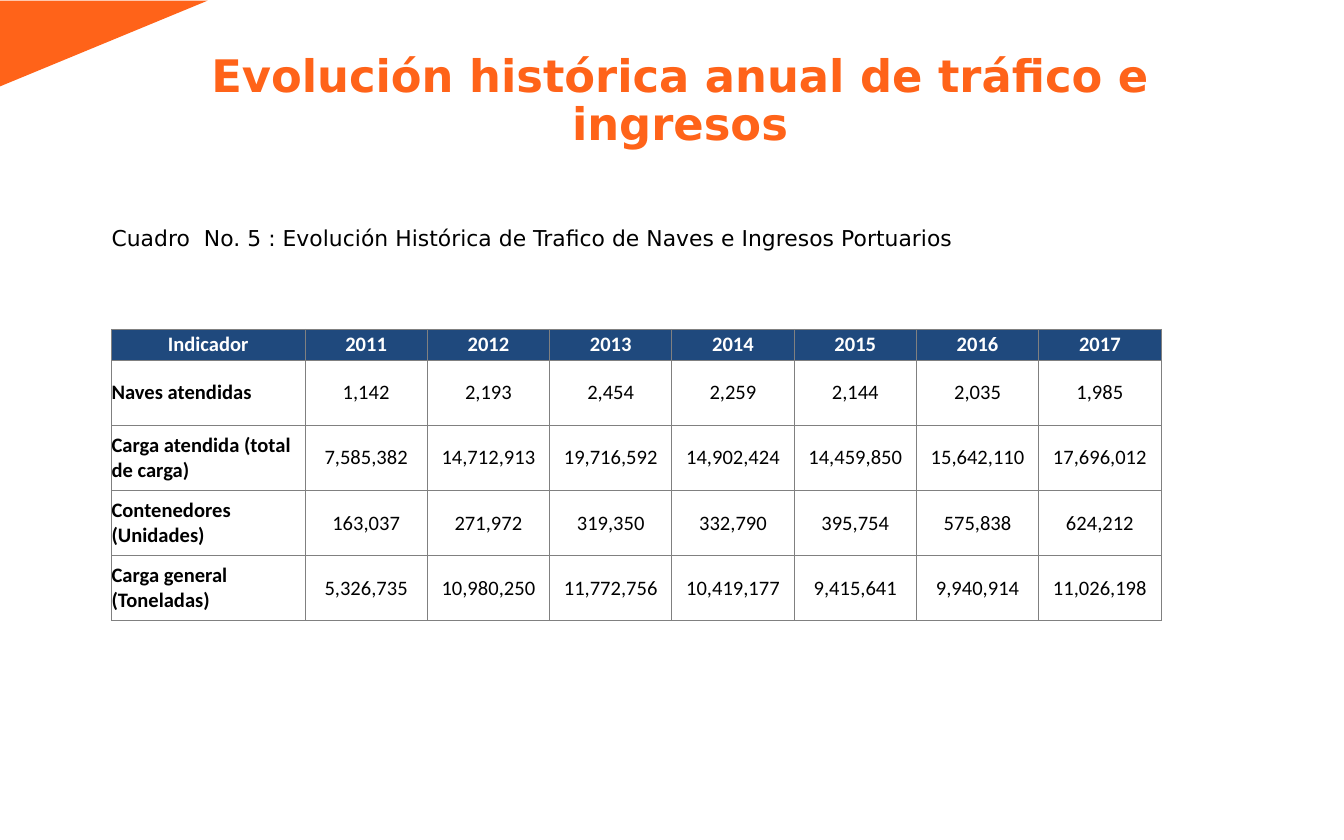
from lxml.etree import SubElement as Sub
from pptx import Presentation
from pptx.dml.color import RGBColor as Rgb
from pptx.enum.shapes import MSO_SHAPE as Shape
from pptx.enum.text import MSO_ANCHOR as Anchor, PP_ALIGN as Align
from pptx.oxml.ns import qn
from pptx.util import Inches, Pt

COLORS = {
    "orange": "FF6319",
    "navy": "1F497D",
    "gray": "808080",
    "black": "000000",
    "white": "FFFFFF",
}

HEAD = ["Indicador"] + [str(year) for year in range(2011, 2018)]
ROWS = [
    ["Naves atendidas", "1,142", "2,193", "2,454", "2,259",
     "2,144", "2,035", "1,985"],
    ["Carga atendida (total de carga)", "7,585,382", "14,712,913",
     "19,716,592", "14,902,424", "14,459,850", "15,642,110", "17,696,012"],
    ["Contenedores (Unidades)", "163,037", "271,972", "319,350", "332,790",
     "395,754", "575,838", "624,212"],
    ["Carga general (Toneladas)", "5,326,735", "10,980,250", "11,772,756",
     "10,419,177", "9,415,641", "9,940,914", "11,026,198"],
]


def color(name):
    return Rgb.from_string(COLORS[name])


def write(frame, text, size=11, font="Calibri", ink="black", bold=False,
          align=Align.LEFT, space=1.0):
    frame.word_wrap = True
    para = frame.paragraphs[0]
    para.alignment = align
    para.line_spacing = space
    run = para.add_run()
    run.text = text
    run.font.size = Pt(size)
    run.font.name = font
    run.font.bold = bold
    run.font.color.rgb = color(ink)


def clear_insets(item):
    item.margin_left = item.margin_right = 0
    item.margin_top = item.margin_bottom = 0


def add_text(slide, box, text, anchor, **style):
    frame = slide.shapes.add_textbox(*map(Inches, box)).text_frame
    clear_insets(frame)
    frame.vertical_anchor = anchor
    write(frame, text, font="DejaVu Sans", space=0.9, **style)


def add_corner(slide):
    box = map(Inches, (0.45, -0.45, 0.64, 1.55))
    corner = slide.shapes.add_shape(Shape.RIGHT_TRIANGLE, *box)
    corner.rotation = 90
    corner.shadow.inherit = False
    corner.fill.solid()
    corner.fill.fore_color.rgb = color("orange")
    corner.line.fill.background()


def set_borders(cell):
    props = cell._tc.get_or_add_tcPr()
    for i, side in enumerate(("lnL", "lnR", "lnT", "lnB")):
        line = props.makeelement(qn(f"a:{side}"), {"w": str(Pt(0.5))})
        fill = Sub(line, qn("a:solidFill"))
        Sub(fill, qn("a:srgbClr"), val=COLORS["gray"])
        props.insert(i, line)  # borders come before the fill


def fill_cell(cell, text, head, label):
    clear_insets(cell)
    cell.vertical_anchor = Anchor.MIDDLE
    if head:
        cell.fill.solid()
        cell.fill.fore_color.rgb = color("navy")
    else:
        cell.fill.background()
    set_borders(cell)
    write(cell.text_frame, text, bold=head or label,
          ink="white" if head else "black",
          align=Align.LEFT if label and not head else Align.CENTER)


def add_grid(slide):
    data = [HEAD] + ROWS
    box = map(Inches, (0.83, 2.45, 7.8, 2.17))
    table = slide.shapes.add_table(len(data), len(HEAD), *box).table
    table.first_row = table.horz_banding = False
    for c, col in enumerate(table.columns):
        col.width = Inches(0.91 if c else 1.44)
    for r, row in enumerate(table.rows):
        row.height = Inches(0.485 if r else 0.23)
        for c, text in enumerate(data[r]):
            fill_cell(table.cell(r, c), text, head=r == 0, label=c == 0)


def main():
    deck = Presentation()
    deck.slide_width, deck.slide_height = Inches(10), Inches(6.25)
    slide = deck.slides.add_slide(deck.slide_layouts[6])

    # Corner accent
    add_corner(slide)

    # Title and table caption
    add_text(slide, (0.81, 0.29, 8.5, 0.83),
             "Evolución histórica anual de tráfico e ingresos",
             Anchor.BOTTOM, size=24, ink="orange", bold=True,
             align=Align.CENTER)
    add_text(slide, (0.83, 1.47, 8.35, 0.63),
             "Cuadro  No. 5 : Evolución Histórica de Trafico de Naves "
             "e Ingresos Portuarios", Anchor.MIDDLE, size=11.7)

    # Yearly traffic figures
    add_grid(slide)

    deck.save("out.pptx")


if __name__ == "__main__":
    main()
